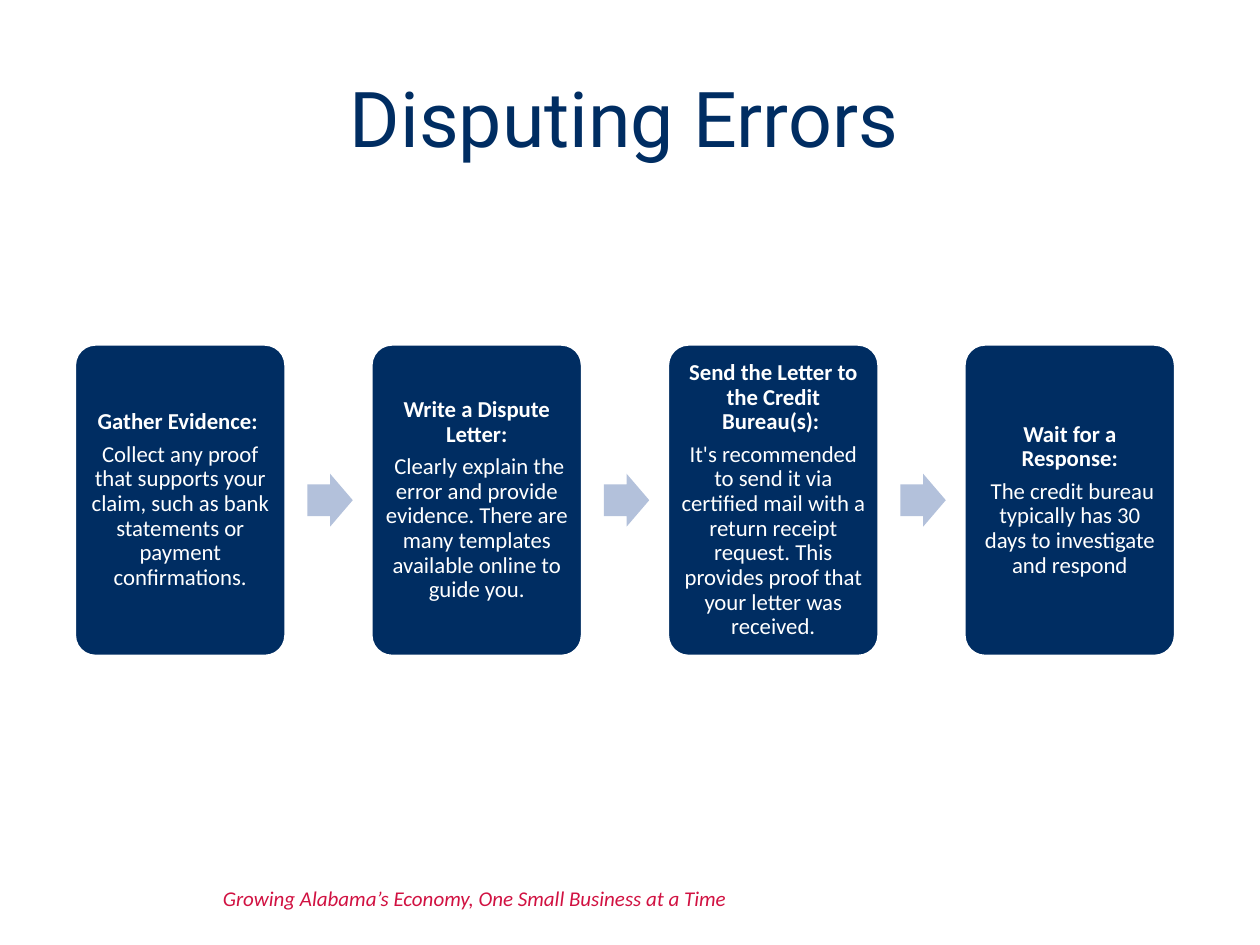
from pptx import Presentation
from pptx.dml.color import RGBColor
from pptx.enum.shapes import MSO_SHAPE as Shape
from pptx.enum.text import MSO_ANCHOR as Anchor, PP_ALIGN as Align
from pptx.util import Inches, Pt

COLORS = {"navy": "002D62", "arrow": "B3C1DB", "red": "D11242", "white": "FFFFFF"}

STEPS = [
    ("Gather Evidence: ",
     "Collect any proof that supports your claim, such as bank statements or "
     "payment confirmations."),
    ("Write a Dispute Letter:",
     " Clearly explain the error and provide evidence. There are many templates "
     "available online to guide you."),
    ("Send the Letter to the Credit Bureau(s): ",
     "It's recommended to send it via certified mail with a return receipt request. "
     "This provides proof that your letter was received."),
    ("Wait for a Response:",
     " The credit bureau typically has 30 days to investigate and respond"),
]

LEFT, TOP = 0.59, 2.73
CARD_W, CARD_H = 1.68, 2.48
RIGHT = 9.33
PITCH = (RIGHT - LEFT - CARD_W) / (len(STEPS) - 1)
ARROW_W, ARROW_H, ARROW_GAP = 0.36, 0.42, 0.17


def color(name):
    return RGBColor.from_string(COLORS[name])


def write(paragraph, text, size, ink, font="Calibri", bold=False, italic=False,
          align=Align.CENTER, line=None, after=None):
    paragraph.alignment = align
    paragraph.line_spacing = line
    paragraph.space_after = after
    run = paragraph.add_run()
    run.text = text
    run.font.name, run.font.size = font, Pt(size)
    run.font.bold, run.font.italic = bold, italic
    run.font.color.rgb = color(ink)


def add_filled(slide, kind, left, top, width, height, fill, adjustments):
    shape = slide.shapes.add_shape(kind, *map(Inches, (left, top, width, height)))
    shape.shadow.inherit = False
    shape.fill.solid()
    shape.fill.fore_color.rgb = color(fill)
    shape.line.fill.background()
    for index, value in enumerate(adjustments):
        shape.adjustments[index] = value
    return shape


def add_title(slide, text):
    title = slide.shapes.title
    title.left, title.top, title.width, title.height = map(
        Inches, (0.58, 0.3, 8.75, 1.25))
    title.text_frame.vertical_anchor = Anchor.MIDDLE
    write(title.text_frame.paragraphs[0], text, 44, "navy", font="Roboto")


def add_step(slide, left, heading, detail):
    card = add_filled(slide, Shape.ROUNDED_RECTANGLE, left, TOP, CARD_W, CARD_H,
                      "navy", [0.1])
    card.line.color.rgb = color("white")
    card.line.width = Pt(2)
    frame = card.text_frame
    frame.word_wrap = True
    frame.vertical_anchor = Anchor.MIDDLE
    frame.margin_left = frame.margin_right = Inches(0.05)
    frame.margin_top = frame.margin_bottom = Inches(0.05)
    spacing = {"line": 0.9, "after": Pt(4.55)}
    write(frame.paragraphs[0], heading, 13, "white", bold=True, **spacing)
    write(frame.add_paragraph(), detail, 13, "white", **spacing)


def add_arrow(slide, card_left):
    add_filled(slide, Shape.RIGHT_ARROW, card_left + CARD_W + ARROW_GAP,
               TOP + (CARD_H - ARROW_H) / 2, ARROW_W, ARROW_H, "arrow", [0.6, 0.5])


def add_tagline(slide, text):
    tagline = slide.shapes.add_textbox(*map(Inches, (1.67, 6.93, 4.33, 0.4)))
    frame = tagline.text_frame
    frame.word_wrap = True
    frame.vertical_anchor = Anchor.MIDDLE
    write(frame.paragraphs[0], text, 12, "red", italic=True, align=Align.LEFT)


def main():
    deck = Presentation()
    deck.slide_width, deck.slide_height = Inches(10), Inches(7.5)
    slide = deck.slides.add_slide(deck.slide_layouts.get_by_name("Title Only"))
    add_title(slide, "Disputing Errors")
    for column, (heading, detail) in enumerate(STEPS):
        left = LEFT + column * PITCH
        add_step(slide, left, heading, detail)
        if column < len(STEPS) - 1:
            add_arrow(slide, left)
    add_tagline(slide, "Growing Alabama’s Economy, One Small Business at a Time")
    deck.save("out.pptx")


if __name__ == "__main__":
    main()
